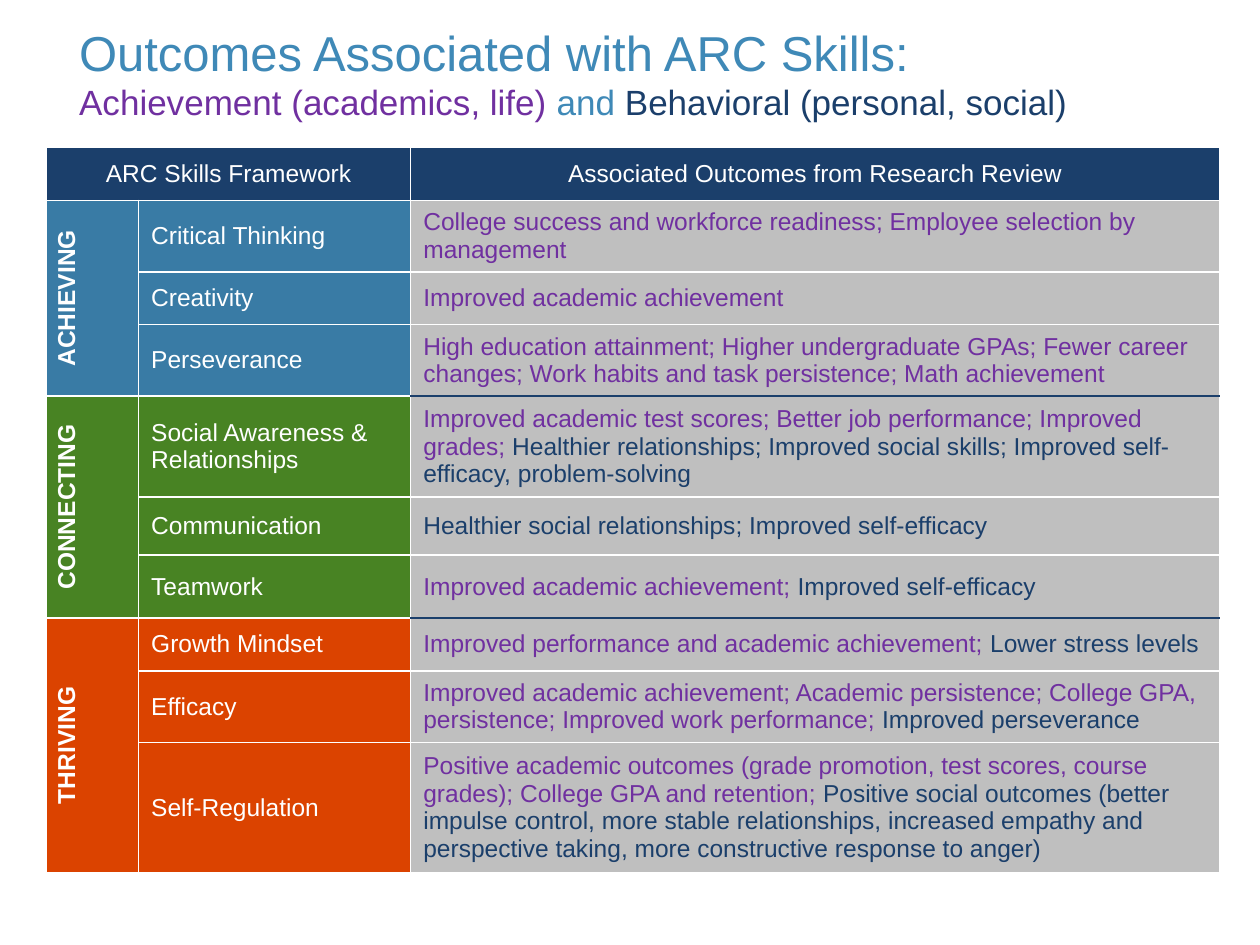
from pptx import Presentation
from pptx import util as u
from pptx.dml import color
from pptx.enum import text
from pptx.oxml import ns
from lxml import etree

# Content: each outcome is a list of (text, kind) runs
TITLE = "Outcomes Associated with ARC Skills:"
SUBTITLE = [("Achievement (academics, life) ", "achievement"), ("and ", "title"),
            ("Behavioral (personal, social)", "behavioral")]
HEADERS = ["ARC Skills Framework", "Associated Outcomes from Research Review"]
GROUPS = [
    ("ACHIEVING", [
        ("Critical Thinking", [
            ("College success and workforce readiness; Employee selection by management", "achievement")]),
        ("Creativity", [("Improved academic achievement", "achievement")]),
        ("Perseverance", [
            ("High education attainment; Higher undergraduate GPAs; Fewer career changes; "
             "Work habits and task persistence; Math achievement", "achievement")]),
    ]),
    ("CONNECTING", [
        ("Social Awareness & Relationships", [
            ("Improved academic test scores; Better job performance; Improved grades; ", "achievement"),
            ("Healthier relationships; Improved social skills; Improved self-efficacy, "
             "problem-solving", "behavioral")]),
        ("Communication", [
            ("Healthier social relationships; Improved self-efficacy", "behavioral")]),
        ("Teamwork", [("Improved academic achievement; ", "achievement"),
                      ("Improved self-efficacy", "behavioral")]),
    ]),
    ("THRIVING", [
        ("Growth Mindset", [("Improved performance and academic achievement;", "achievement"),
                            (" Lower stress levels", "behavioral")]),
        ("Efficacy", [
            ("Improved academic achievement; Academic persistence; College GPA, persistence; "
             "Improved work performance;", "achievement"),
            (" Improved perseverance", "behavioral")]),
        ("Self-Regulation", [
            ("Positive academic outcomes (grade promotion, test scores, course grades); "
             "College GPA and retention;", "achievement"),
            (" Positive social outcomes (better impulse control, more stable relationships, "
             "increased empathy and perspective taking, more constructive response to anger)",
             "behavioral")]),
    ]),
]

THEME = {
    "font": "Arial", "title_size": 28, "subtitle_size": 20, "table_size": 14,
    "title": "3F89B7", "achievement": "7030A0", "behavioral": "1B3F6B",
    "header": "1B3F6B", "outcome": "BFBFBF", "white": "FFFFFF",
    "ACHIEVING": "397BA5", "CONNECTING": "488323", "THRIVING": "DB4300",
}
COLUMN_WIDTHS = [0.73, 2.16, 6.42]
ROW_HEIGHTS = [0.42, 0.54, 0.42, 0.54, 0.76, 0.46, 0.5, 0.42, 0.54, 0.97]


def add_text(paragraph, content, kind="white", size=THEME["table_size"], bold=False, align=None):
    run = paragraph.add_run()
    run.text = content
    run.font.name = THEME["font"]
    run.font.size = u.Pt(size)
    run.font.bold = bold
    run.font.color.rgb = color.RGBColor.from_string(THEME[kind])
    if align is not None:
        paragraph.alignment = align


def format_cell(cell, fill, top="white", bottom="white"):
    cell.vertical_anchor = text.MSO_ANCHOR.MIDDLE
    properties = cell._tc.get_or_add_tcPr()
    for edge, kind in {"lnL": "white", "lnR": "white", "lnT": top, "lnB": bottom}.items():
        line = etree.SubElement(properties, ns.qn(f"a:{edge}"), w=str(u.Pt(1)))
        line_fill = etree.SubElement(line, ns.qn("a:solidFill"))
        etree.SubElement(line_fill, ns.qn("a:srgbClr"), val=THEME[kind])
    cell.fill.solid()
    cell.fill.fore_color.rgb = color.RGBColor.from_string(THEME[fill])


def add_title(slide):
    box = slide.shapes.add_textbox(u.Inches(0.53), u.Inches(0.13), u.Inches(9), u.Inches(0.89))
    frame = box.text_frame
    frame.word_wrap = True
    frame.vertical_anchor = text.MSO_ANCHOR.MIDDLE
    paragraph = frame.paragraphs[0]
    add_text(paragraph, TITLE, kind="title", size=THEME["title_size"])
    paragraph.add_line_break()
    for content, kind in SUBTITLE:
        add_text(paragraph, content, kind=kind, size=THEME["subtitle_size"])


def add_outcomes_table(slide):
    table = slide.shapes.add_table(
        len(ROW_HEIGHTS), len(COLUMN_WIDTHS), u.Inches(0.37), u.Inches(1.17),
        u.Inches(sum(COLUMN_WIDTHS)), u.Inches(sum(ROW_HEIGHTS))).table
    table.first_row = table.horz_banding = False
    for column, width in zip(table.columns, COLUMN_WIDTHS):
        column.width = u.Inches(width)
    for row, height in zip(table.rows, ROW_HEIGHTS):
        row.height = u.Inches(height)

    # Header row
    for column in range(len(COLUMN_WIDTHS)):
        format_cell(table.cell(0, column), "header")
    table.cell(0, 0).merge(table.cell(0, 1))
    for column, header in zip((0, 2), HEADERS):
        add_text(table.cell(0, column).text_frame.paragraphs[0], header,
                 align=text.PP_ALIGN.CENTER)

    # Skill groups, with a dark rule between their outcomes
    first = 1
    for group, skills in GROUPS:
        last = first + len(skills) - 1
        for row, (skill, outcomes) in enumerate(skills, first):
            group_cell, skill_cell, outcome_cell = (table.cell(row, c) for c in range(3))
            format_cell(group_cell, group)
            format_cell(skill_cell, group)
            top = "behavioral" if row == first > 1 else "white"
            bottom = "behavioral" if row == last < len(ROW_HEIGHTS) - 1 else "white"
            format_cell(outcome_cell, "outcome", top=top, bottom=bottom)
            add_text(skill_cell.text_frame.paragraphs[0], skill)
            for content, kind in outcomes:
                add_text(outcome_cell.text_frame.paragraphs[0], content, kind=kind)
        group_cell = table.cell(first, 0)
        group_cell.merge(table.cell(last, 0))
        group_cell._tc.get_or_add_tcPr().set("vert", "vert270")
        add_text(group_cell.text_frame.paragraphs[0], group, bold=True,
                 align=text.PP_ALIGN.CENTER)
        first = last + 1


def main():
    presentation = Presentation()
    presentation.slide_width, presentation.slide_height = u.Inches(10), u.Inches(7.5)
    slide = presentation.slides.add_slide(presentation.slide_layouts[6])
    add_title(slide)
    add_outcomes_table(slide)
    presentation.save("out.pptx")


if __name__ == "__main__":
    main()
